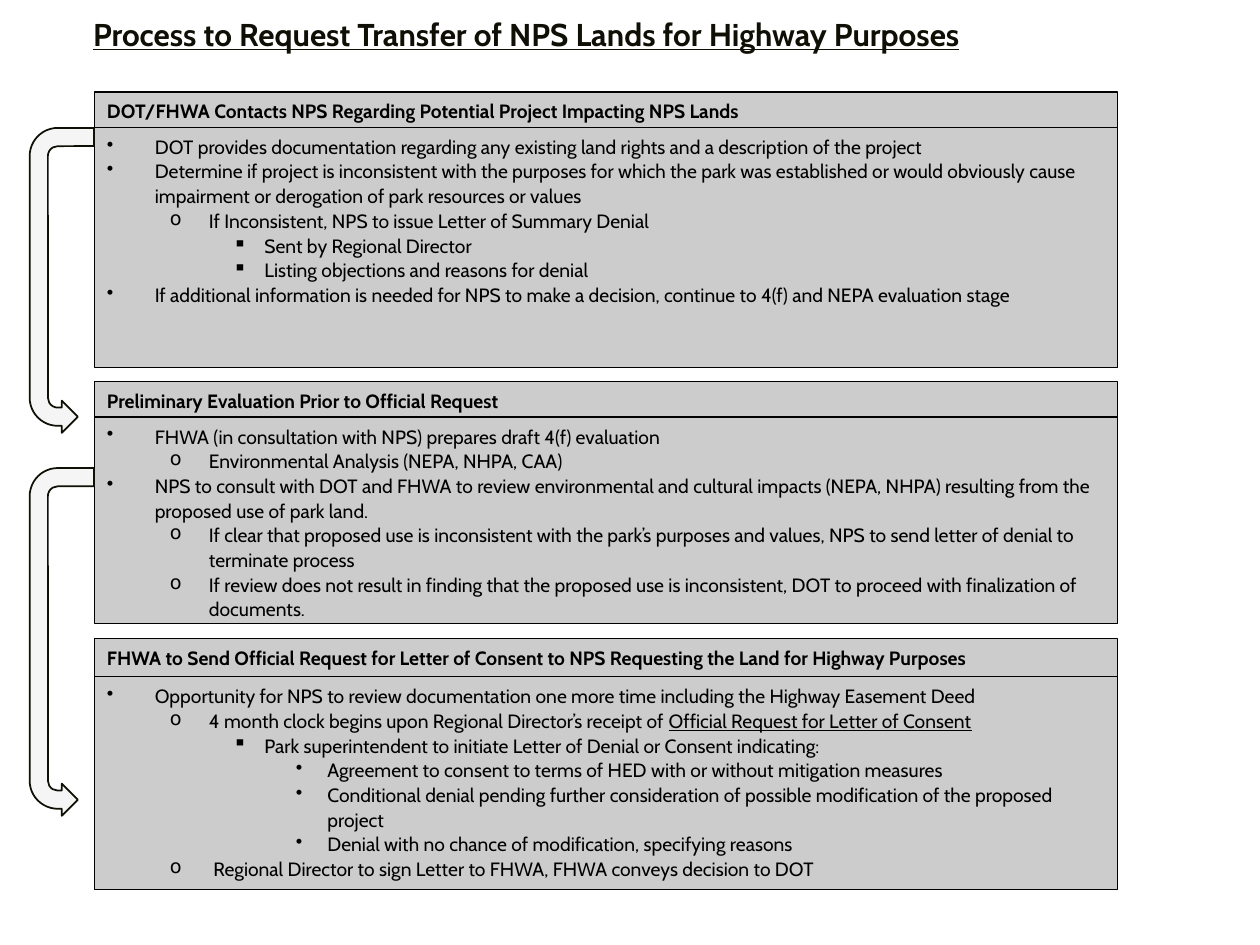
"""Build the slide on requesting transfer of NPS lands for highway purposes."""
from dataclasses import dataclass

from lxml import etree
from pptx import Presentation
from pptx.dml.color import RGBColor
from pptx.enum.shapes import MSO_SHAPE
from pptx.enum.text import MSO_ANCHOR, PP_ALIGN
from pptx.oxml.ns import qn
from pptx.util import Inches, Pt

RECTANGLE, U_TURN = MSO_SHAPE.RECTANGLE, MSO_SHAPE.U_TURN_ARROW
TOP, LEFT = MSO_ANCHOR.TOP, PP_ALIGN.LEFT


@dataclass(frozen=True)
class Theme:
    font: str = "Cabin"
    title_size: int = 18
    text_size: int = 11
    ink: str = "0F0F05"
    black: str = "000000"
    panel: str = "CCCCCC"
    arrow: str = "F5F5F5"


THEME = Theme()
PANEL_LEFT, PANEL_WIDTH = 0.75, 8.12
LEVELS = [("•", 0.38, 0.38), ("o", 0.81, 0.31), ("▪", 1.25, 0.25), ("•", 1.75, 0.25)]

STAGES = [
    (0.73, 0.3, 1.01, 1.91,
     "DOT/FHWA Contacts NPS Regarding Potential Project Impacting NPS Lands", [
         (0, "DOT provides documentation regarding any existing land rights and a description of the project"),
         (0, "Determine if project is inconsistent with the purposes for which the park was established "
             "or would obviously cause impairment or derogation of park resources or values"),
         (1, "If Inconsistent, NPS to issue Letter of Summary Denial"),
         (2, "Sent by Regional Director"),
         (2, "Listing objections and reasons for denial"),
         (0, "If additional information is needed for NPS to make a decision, "
             "continue to 4(f) and NEPA evaluation stage"),
     ]),
    (3.03, 0.32, 3.31, 1.64,
     "Preliminary Evaluation Prior to Official Request", [
         (0, "FHWA (in consultation with NPS) prepares draft 4(f) evaluation"),
         (1, "Environmental Analysis (NEPA, NHPA, CAA)"),
         (0, "NPS to consult with DOT and FHWA to review environmental and cultural impacts "
             "(NEPA, NHPA) resulting from the proposed use of park land."),
         (1, "If clear that proposed use is inconsistent with the park’s purposes and values, "
             "NPS to send letter of denial to terminate process"),
         (1, "If review does not result in finding that the proposed use is inconsistent, "
             "DOT to proceed with finalization of documents."),
     ]),
    (5.07, 0.44, 5.37, 1.69,
     "FHWA to Send Official Request for Letter of Consent to NPS Requesting the Land for Highway Purposes", [
         (0, "Opportunity for NPS to review documentation one more time including the Highway Easement Deed"),
         (1, "4 month clock begins upon Regional Director’s receipt of ", "Official Request for Letter of Consent"),
         (2, "Park superintendent to initiate Letter of Denial or Consent indicating:"),
         (3, "Agreement to consent to terms of HED with or without mitigation measures"),
         (3, "Conditional denial pending further consideration of possible modification of the proposed project"),
         (3, "Denial with no chance of modification, specifying reasons"),
         (1, " Regional Director to sign Letter to FHWA, FHWA conveys decision to DOT"),
     ]),
]
ARROWS = [(-0.72, 1.97, 2.42), (-0.89, 4.84, 2.76)]
ARROW_HEIGHT = 0.51
ARROW_SHAPE = [0.284, 0.25, 0.25, 0.438, 0.75]


def add_span(para, text, size=THEME.text_size, color=THEME.black, bold=False, underline=False):
    """Add one styled run to a paragraph."""
    span = para.add_run()
    span.text = text
    span.font.name = THEME.font
    span.font.size = Pt(size)
    span.font.bold = bold
    span.font.underline = underline
    span.font.color.rgb = RGBColor.from_string(color)


def add_outlined(page, kind, place, fill, line, weight):
    """Add a filled, outlined shape without shadow."""
    shape = page.shapes.add_shape(kind, *[Inches(length) for length in place])
    shape.shadow.inherit = False
    shape.fill.solid()
    shape.fill.fore_color.rgb = RGBColor.from_string(fill)
    shape.line.color.rgb = RGBColor.from_string(line)
    shape.line.width = Pt(weight)
    return shape


deck = Presentation()
deck.slide_width, deck.slide_height = Inches(10), Inches(7.5)
page = deck.slides.add_slide(deck.slide_layouts[6])

title = page.shapes.add_textbox(Inches(0.64), Inches(0.07), Inches(8.49), Inches(0.71))
title.text_frame.word_wrap = True
add_span(title.text_frame.paragraphs[0], "Process to Request Transfer of NPS Lands for Highway Purposes",
         THEME.title_size, THEME.ink, bold=True, underline=True)

for head_top, head_height, body_top, body_height, heading, items in STAGES:
    head, body = [
        add_outlined(page, RECTANGLE, (PANEL_LEFT, top, PANEL_WIDTH, height), THEME.panel, THEME.black, 0.75)
        for top, height in ((head_top, head_height), (body_top, body_height))
    ]
    for box in (head, body):
        box.text_frame.word_wrap = True
        box.text_frame.vertical_anchor = TOP

    para = head.text_frame.paragraphs[0]
    para.alignment = LEFT
    para.line_spacing = 1.07
    add_span(para, heading, bold=True)

    for index, (level, text, *underlined) in enumerate(items):
        para = body.text_frame.add_paragraph() if index else body.text_frame.paragraphs[0]
        para.alignment = LEFT
        para.level = level
        para.line_spacing = 1.07
        add_span(para, text)
        for phrase in underlined:
            add_span(para, phrase, underline=True)
        bullet, margin, hanging = LEVELS[level]
        properties = para._p.get_or_add_pPr()
        properties.set("marL", str(Inches(margin)))
        properties.set("indent", str(-Inches(hanging)))
        etree.SubElement(properties, qn("a:buChar"), char=bullet)

for left, top, length in ARROWS:
    arrow = add_outlined(page, U_TURN, (left, top, length, ARROW_HEIGHT), THEME.arrow, THEME.ink, 1)
    arrow.rotation = 270
    arrow._element.spPr.xfrm.set("flipH", "1")
    for index, value in enumerate(ARROW_SHAPE):
        arrow.adjustments[index] = value

deck.save("out.pptx")
